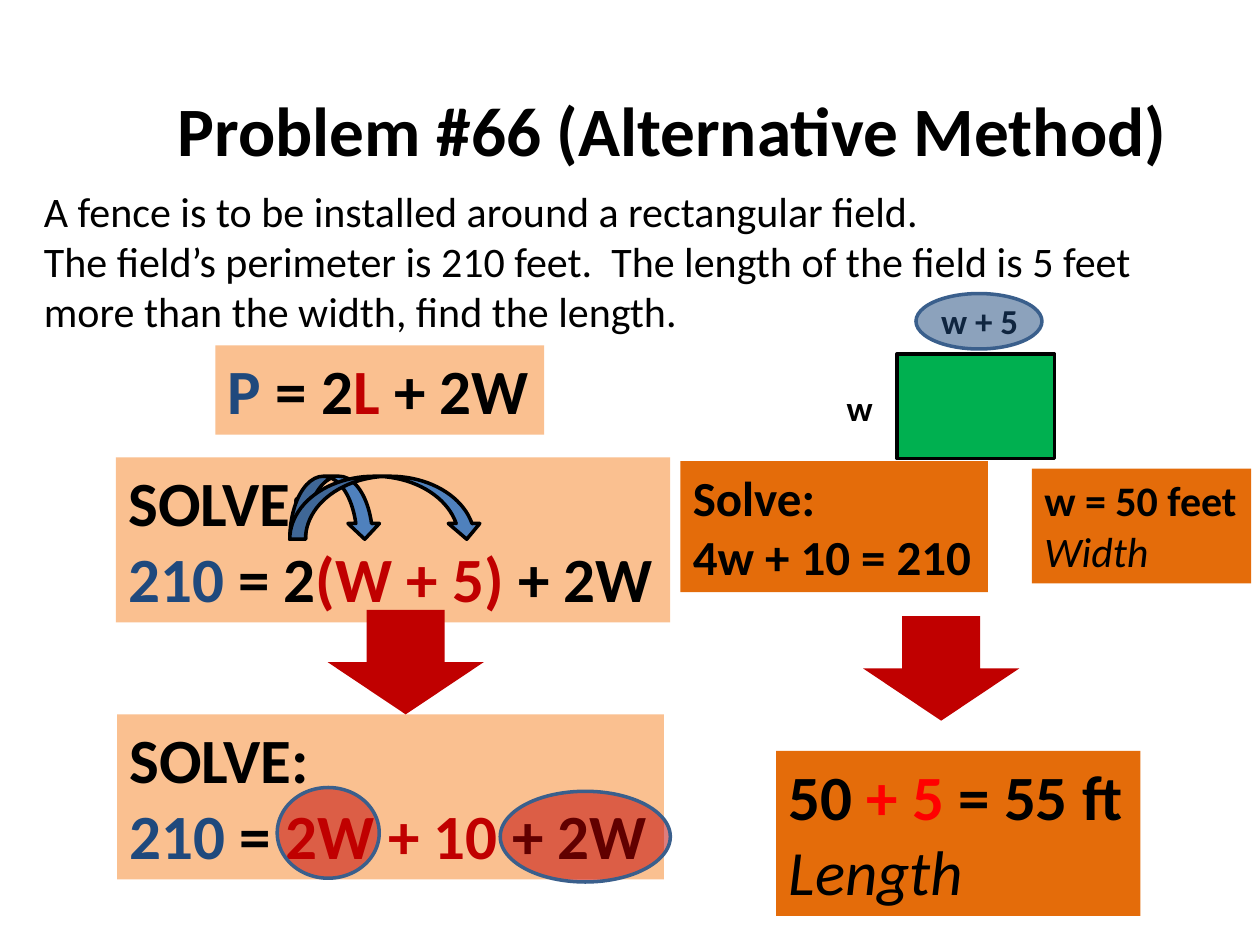
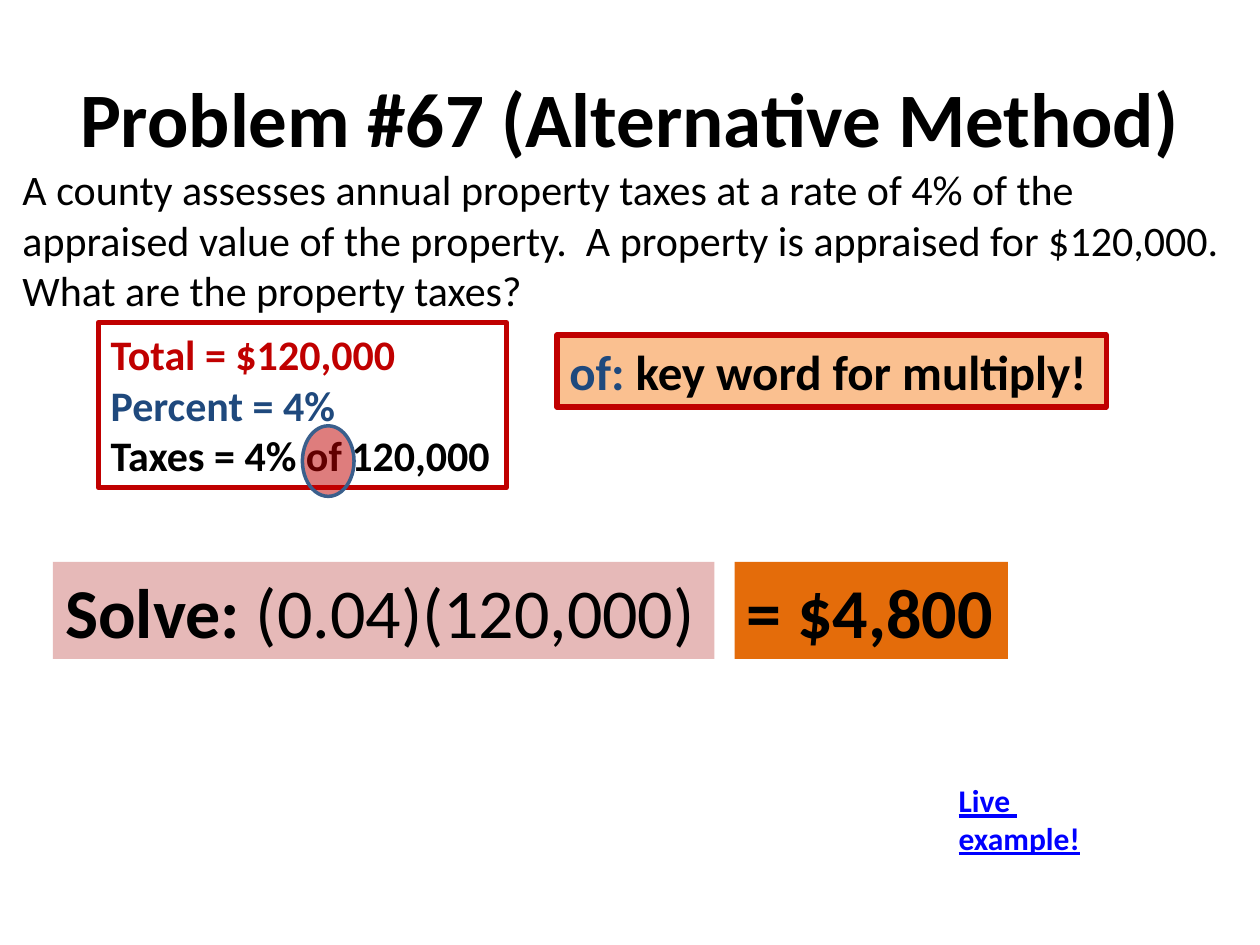
from dataclasses import dataclass
from typing import Optional

from lxml.etree import SubElement
from pptx import Presentation
from pptx.dml.color import RGBColor
from pptx.enum.shapes import MSO_SHAPE
from pptx.enum.text import MSO_ANCHOR, MSO_AUTO_SIZE, PP_ALIGN
from pptx.oxml.ns import qn
from pptx.util import Pt

PX = 9144  # EMU per px, 100 px to the inch


@dataclass(frozen=True)
class Theme:
    font: str = "Calibri"
    black: str = "000000"
    navy: str = "1F497D"
    crimson: str = "C00000"
    red: str = "FF0000"
    link: str = "0000FF"
    peach: str = "FAC090"
    orange: str = "E46C0A"
    rose: str = "E6B9B8"
    green: str = "00B050"
    blue: str = "4F81BD"
    outline: str = "3A5F8C"
    label: float = 20
    body: float = 24
    step: float = 28
    equation: float = 36
    answer: float = 40


T = Theme()


@dataclass(frozen=True)
class Box:
    x: int
    y: int
    w: int
    h: int


@dataclass(frozen=True)
class Run:
    text: str
    color: str = T.black
    bold: bool = True
    italic: bool = False
    underline: bool = False


@dataclass(frozen=True)
class Panel:
    box: Box
    size: float
    lines: list[list[Run]]
    fill: Optional[str] = None
    line: Optional[str] = None
    wrap: bool = False


@dataclass(frozen=True)
class Figure:
    kind: MSO_SHAPE
    box: Box
    fill: str
    line: Optional[str] = None
    alpha: Optional[int] = None


def emu(box: Box) -> list[int]:
    return [v * PX for v in (box.x, box.y, box.w, box.h)]


def add_runs(p, runs: list[Run], size: float) -> None:
    for run in runs:
        r = p.add_run()
        r.text = run.text
        r.font.name, r.font.size = T.font, Pt(size)
        r.font.bold, r.font.italic = run.bold, run.italic
        r.font.underline = run.underline
        r.font.color.rgb = RGBColor.from_string(run.color)


def add_title(s, text: str, box: Box, size: float) -> None:
    tf = s.shapes.add_textbox(*emu(box)).text_frame
    tf.word_wrap = True
    tf.vertical_anchor = MSO_ANCHOR.MIDDLE
    p = tf.paragraphs[0]
    p.alignment = PP_ALIGN.CENTER
    add_runs(p, [Run(text)], size)


def add_panel(s, panel: Panel) -> None:
    sp = s.shapes.add_textbox(*emu(panel.box))
    if panel.fill:
        sp.fill.solid()
        sp.fill.fore_color.rgb = RGBColor.from_string(panel.fill)
    if panel.line:
        sp.line.color.rgb = RGBColor.from_string(panel.line)
        sp.line.width = Pt(3)
    tf = sp.text_frame
    tf.word_wrap = panel.wrap
    tf.auto_size = MSO_AUTO_SIZE.SHAPE_TO_FIT_TEXT
    for i, runs in enumerate(panel.lines):
        p = tf.add_paragraph() if i else tf.paragraphs[0]
        add_runs(p, runs, panel.size)


def add_figure(s, fig: Figure) -> None:
    sp = s.shapes.add_shape(fig.kind, *emu(fig.box))
    sp.shadow.inherit = False
    sp.fill.solid()
    sp.fill.fore_color.rgb = RGBColor.from_string(fig.fill)
    if fig.alpha is not None:
        color = sp.fill._xPr.find(f"{qn('a:solidFill')}/{qn('a:srgbClr')}")
        SubElement(color, qn("a:alpha")).set("val", str(fig.alpha * 1000))
    if fig.line:
        sp.line.color.rgb = RGBColor.from_string(fig.line)
        sp.line.width = Pt(2)
    else:
        sp.line.fill.background()


def draw(s, items: list) -> None:
    for item in items:
        if isinstance(item, Panel):
            add_panel(s, item)
        else:
            add_figure(s, item)


def question(box: Box, *lines: str) -> Panel:
    return Panel(box, T.body, [[Run(line, bold=False)] for line in lines])


def label(text: str, box: Box) -> Panel:
    return Panel(box, T.label, [[Run(text)]])


def highlight(box: Box, color: str = T.crimson) -> Figure:
    return Figure(MSO_SHAPE.OVAL, box, color, T.outline, 51)


def distribute_arrow(width: int) -> Figure:
    return Figure(MSO_SHAPE.CURVED_DOWN_ARROW, Box(230, 378, width, 50), T.blue, T.black)


def next_arrow(x: int, y: int) -> Figure:
    return Figure(MSO_SHAPE.DOWN_ARROW, Box(x, y, 124, 83), T.crimson)


def fence_slide(s) -> None:
    add_title(s, "Problem #66 (Alternative Method)", Box(117, 49, 833, 106), 39.6)
    given = Run("210", T.navy)
    draw(s, [
        question(Box(25, 142, 899, 131),
                 "A fence is to be installed around a rectangular field.",
                 "The field’s perimeter is 210 feet.  The length of the field is 5 feet",
                 "more than the width, find the length."),
        # Field diagram
        Figure(MSO_SHAPE.RECTANGLE, Box(712, 281, 125, 83), T.green, T.black),
        label("w", Box(662, 302, 41, 44)),
        label("w + 5", Box(737, 233, 82, 44)),
        # Perimeter formula and substitution
        Panel(Box(171, 274, 261, 71), T.equation,
              [[Run("P", T.navy), Run(" = 2"), Run("L", T.crimson), Run(" + 2W")]], T.peach),
        Panel(Box(92, 363, 440, 131), T.equation,
              [[Run("SOLVE:")],
               [given, Run(" = 2"), Run("(W + 5)", T.crimson), Run(" + 2W")]], T.peach),
        distribute_arrow(72),
        distribute_arrow(153),
        # Like terms
        Panel(Box(93, 567, 434, 131), T.equation,
              [[Run("SOLVE:")],
               [given, Run(" = "), Run("2W + 10", T.crimson), Run(" + 2W")]], T.peach),
        next_arrow(260, 484),
        highlight(Box(220, 625, 81, 72)),
        highlight(Box(397, 628, 135, 72)),
        # Width, then length
        Panel(Box(540, 366, 244, 104), T.step,
              [[Run("Solve:")], [Run("4w + 10 = 210")]], T.orange),
        highlight(Box(727, 233, 100, 44), T.navy),
        Panel(Box(819, 372, 174, 91), T.body,
              [[Run("w = 50 feet")], [Run("Width", bold=False, italic=True)]], T.orange),
        next_arrow(685, 489),
        Panel(Box(616, 596, 289, 131), T.equation,
              [[Run("50 "), Run("+ 5 ", T.red), Run("= 55 ft")],
               [Run("Length", bold=False, italic=True)]], T.orange),
    ])


def tax_slide(s) -> None:
    add_title(s, "Problem #67 (Alternative Method)", Box(50, 30, 900, 125), 44)
    draw(s, [
        question(Box(8, 125, 979, 131),
                 "A county assesses annual property taxes at a rate of 4% of the",
                 "appraised value of the property.  A property is appraised for $120,000.",
                 "What are the property taxes?"),
        # Known values
        Panel(Box(78, 256, 324, 131), T.body,
              [[Run("Total = $120,000", T.crimson)],
               [Run("Percent = 4%", T.navy)],
               [Run("Taxes = 4% of 120,000")]], line=T.crimson),
        # Solution
        Panel(Box(42, 446, 525, 77), T.answer,
              [[Run("Solve: "), Run("(0.04)(120,000)", bold=False)]], T.rose),
        Panel(Box(583, 446, 217, 77), T.answer, [[Run("= $4,800")]], T.orange),
        # Key word
        highlight(Box(240, 338, 41, 56)),
        Panel(Box(442, 266, 436, 57), T.step,
              [[Run("of: ", T.navy), Run("key word for multiply!")]], T.peach, T.crimson),
        Panel(Box(751, 615, 124, 71), 18,
              [[Run(word, T.link, underline=True)] for word in ("Live ", "example!")],
              wrap=True),
    ])


def main() -> None:
    prs = Presentation()
    prs.slide_width, prs.slide_height = 1000 * PX, 750 * PX
    for build in (fence_slide, tax_slide):
        build(prs.slides.add_slide(prs.slide_layouts[6]))
    prs.save("out.pptx")


if __name__ == "__main__":
    main()
